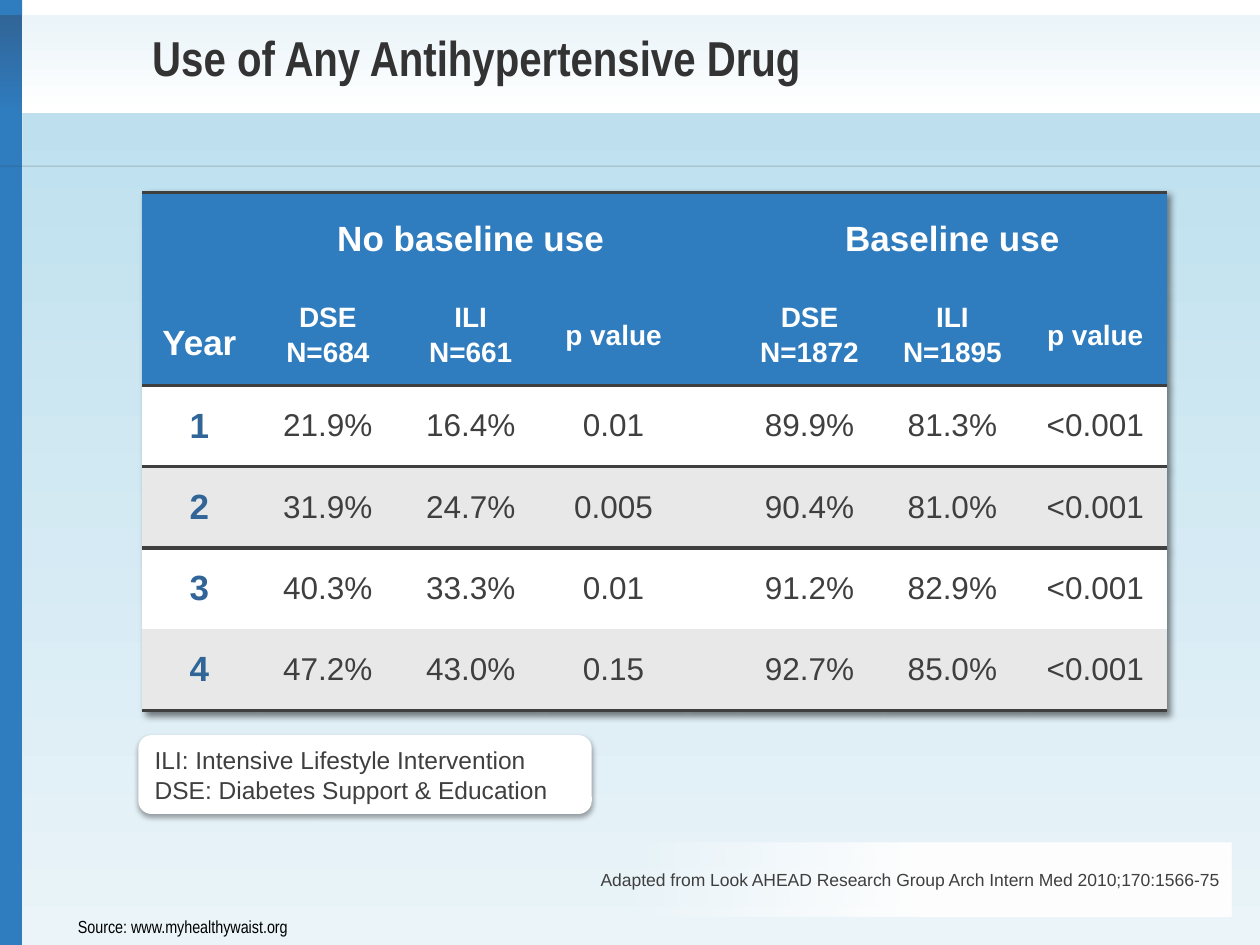
import dataclasses

import pptx
import pptx.dml.color
import pptx.enum.shapes
import pptx.enum.text
import pptx.oxml
import pptx.oxml.ns
import pptx.util
from pptx.util import Cm, Pt

SHAPE = pptx.enum.shapes.MSO_SHAPE
ALIGN = pptx.enum.text.PP_ALIGN
ANCHOR = pptx.enum.text.MSO_ANCHOR
NS = pptx.oxml.ns.nsdecls("a")


@dataclasses.dataclass(frozen=True)
class Theme:
    blue: str = "2F7CBE"
    deep_blue: str = "316598"
    sky: str = "BEE0EE"
    pale: str = "EAF4F9"
    white: str = "FFFFFF"
    grey: str = "E8E8E8"
    ink: str = "3F3F3F"
    title_ink: str = "333333"
    black: str = "000000"
    font: str = "Arial"
    narrow: str = "Arial Narrow"
    title: int = 28
    heading: int = 20
    figure: int = 18
    subheading: int = 16
    legend: int = 14
    small: int = 10


THEME = Theme()
PLAIN_TABLE_STYLE = "{2D5ABB26-0587-4C30-8999-92F81FD0307C}"


def rgb(color):
    return pptx.dml.color.RGBColor.from_string(color)


def shadow_xml(blur, distance, angle, opacity):
    return pptx.oxml.parse_xml(
        f'<a:outerShdw {NS} blurRad="{Pt(blur)}" dist="{Pt(distance)}" dir="{angle * 60000}" '
        f'algn="tl" rotWithShape="0"><a:srgbClr val="{THEME.black}">'
        f'<a:alpha val="{opacity * 1000}"/></a:srgbClr></a:outerShdw>')


def set_alpha(color_element, percent):
    color_element.append(pptx.oxml.parse_xml(f'<a:alpha {NS} val="{percent * 1000}"/>'))


def write(frame, text, size, color, font=THEME.font, bold=False, align=ALIGN.LEFT, gap=0):
    frame.text = text
    for paragraph in frame.paragraphs:
        paragraph.alignment = align
        paragraph.space_after = Pt(gap)
        for run in paragraph.runs:
            run.font.size, run.font.bold, run.font.name = Pt(size), bold, font
            run.font.color.rgb = rgb(color)


def add_panel(slide, box, *colors, kind=SHAPE.RECTANGLE, angle=270):
    """A borderless shape: one colour fills it plainly, two make a gradient."""
    panel = slide.shapes.add_shape(kind, *box)
    panel.shadow.inherit = False
    panel.line.fill.background()
    if len(colors) == 1:
        panel.fill.solid()
        panel.fill.fore_color.rgb = rgb(colors[0])
    else:
        panel.fill.gradient()
        panel.fill.gradient_angle = angle
        for stop, color in zip(panel.fill.gradient_stops, colors):
            stop.color.rgb = rgb(color)
    return panel


def add_label(slide, box, text, size, color, wrap=True, **style):
    label = slide.shapes.add_textbox(*box)
    label.text_frame.word_wrap = wrap
    label.text_frame.vertical_anchor = ANCHOR.MIDDLE
    write(label.text_frame, text, size, color, **style)


def add_backdrop(slide, left, top, width, height):
    rail, band_top, band_height = Cm(0.45), top + Cm(0.31), Cm(1.97)
    body_top = band_top + band_height
    add_panel(slide, (left, top, rail, height), THEME.blue)
    add_panel(slide, (left, band_top, width, band_height), THEME.pale, THEME.white)
    add_panel(slide, (left, band_top, rail, band_height), THEME.deep_blue, THEME.blue)
    add_panel(slide, (left + rail, body_top, width - rail, top + height - body_top),
              THEME.sky, THEME.pale)
    # Hairline across the slide
    rule_y = top + Cm(3.35)
    rule = slide.shapes.add_connector(pptx.enum.shapes.MSO_CONNECTOR.STRAIGHT,
                                      left, rule_y, left + width, rule_y)
    rule.line.width = Pt(0.5)
    rule.line.color.rgb = rgb(THEME.ink)
    set_alpha(rule.element.find(".//" + pptx.oxml.ns.qn("a:srgbClr")), 25)
    rule.element.spPr.append(pptx.oxml.parse_xml(f"<a:effectLst {NS}/>"))


def add_citation(slide, left, top, width, height):
    glow_offset = Cm(6.7)
    glow = add_panel(slide, (left + glow_offset, top, width - glow_offset, height),
                     THEME.white, THEME.white, angle=0)
    glow.fill.gradient_stops[1].position = 0.5
    set_alpha(glow.element.find(".//" + pptx.oxml.ns.qn("a:srgbClr")), 0)
    add_label(slide, (left, top, width, height),
              "Adapted from Look AHEAD Research Group Arch Intern Med 2010;170:1566-75",
              THEME.small, THEME.ink, align=ALIGN.RIGHT)


def set_borders(cell, top=None, bottom=None):
    properties = cell._tc.get_or_add_tcPr()
    for side, width in (("lnB", bottom), ("lnT", top)):
        if width:
            properties.insert(0, pptx.oxml.parse_xml(
                f'<a:{side} {NS} w="{Pt(width)}"><a:solidFill><a:srgbClr val="{THEME.ink}"/>'
                f"</a:solidFill></a:{side}>"))


def add_drug_table(slide, left, top, width, height):
    rows = [
        ["Year", "No baseline use", "", "", "", "Baseline use", "", ""],
        ["", "DSE\nN=684", "ILI\nN=661", "p value", "",
         "DSE\nN=1872", "ILI\nN=1895", "p value"],
        ["1", "21.9%", "16.4%", "0.01", "", "89.9%", "81.3%", "<0.001"],
        ["2", "31.9%", "24.7%", "0.005", "", "90.4%", "81.0%", "<0.001"],
        ["3", "40.3%", "33.3%", "0.01", "", "91.2%", "82.9%", "<0.001"],
        ["4", "47.2%", "43.0%", "0.15", "", "92.7%", "85.0%", "<0.001"],
    ]
    borders = {0: (2, None), 1: (None, 2.25), 2: (2.25, 2.25), 3: (2.25, None), 5: (None, 2)}
    table = slide.shapes.add_table(len(rows), len(rows[0]), left, top, width, height).table
    table.first_row = table.horz_banding = False
    properties = table._tbl.tblPr
    properties[0].text = PLAIN_TABLE_STYLE
    effects = pptx.oxml.parse_xml(f"<a:effectLst {NS}/>")
    effects.append(shadow_xml(4, 3, 45, 50))
    properties.insert(0, effects)

    # The year and spacer columns are fixed; the six others share what is left
    year_width, spacer_width = Cm(2.3), Cm(1.07)
    value_width = (width - year_width - spacer_width) // 6
    for index, column in enumerate(table.columns):
        column.width = {0: year_width, 4: spacer_width}.get(index, value_width)
    head_heights = [Cm(1.88), Cm(2.01)]
    year_height = (height - sum(head_heights)) // 4
    for row, row_height in zip(table.rows, head_heights + [year_height] * 4):
        row.height = row_height

    for r, texts in enumerate(rows):
        for c, text in enumerate(texts):
            cell = table.cell(r, c)
            cell.vertical_anchor = ANCHOR.MIDDLE
            cell.fill.solid()
            cell.fill.fore_color.rgb = rgb(
                THEME.blue if r < 2 else THEME.grey if r % 2 else THEME.white)
            set_borders(cell, *borders.get(r, (None, None)))
            if not text:
                continue
            if r < 2:
                size, color = (THEME.subheading if r else THEME.heading), THEME.white
            else:
                size, color = ((THEME.figure, THEME.ink) if c
                               else (THEME.heading, THEME.deep_blue))
            write(cell.text_frame, text, size, color, bold=r < 2 or c == 0,
                  align=ALIGN.CENTER, gap=2.4 if r == 1 else 0)

    # Spanning headings
    year = table.cell(0, 0)
    year.merge(table.cell(1, 0))
    year.vertical_anchor = ANCHOR.BOTTOM
    year.margin_bottom = Cm(0.45)
    set_borders(year, bottom=2.25)
    for first in (1, 5):
        table.cell(0, first).merge(table.cell(0, first + 2))


def add_legend(slide, left, top, width, height):
    legend = add_panel(slide, (left, top, width, height), THEME.white,
                       kind=SHAPE.ROUNDED_RECTANGLE)
    legend.element.spPr.find(pptx.oxml.ns.qn("a:effectLst")).append(
        shadow_xml(3.1, 1.8, 90, 35))
    legend.text_frame.word_wrap = True
    legend.text_frame.vertical_anchor = ANCHOR.MIDDLE
    write(legend.text_frame,
          "ILI: Intensive Lifestyle Intervention\nDSE: Diabetes Support & Education",
          THEME.legend, THEME.ink)


def main():
    deck = pptx.Presentation()
    deck.slide_width, deck.slide_height = Cm(25.4), Cm(19.05)
    slide = deck.slides.add_slide(deck.slide_layouts[6])

    add_backdrop(slide, 0, 0, deck.slide_width, deck.slide_height)
    add_label(slide, (Cm(1.32), Cm(18.34), Cm(4.8), Cm(0.69)), "Source: www.myhealthywaist.org",
              THEME.small, THEME.black, wrap=False, font=THEME.narrow)
    add_label(slide, (Cm(2.82), Cm(0.43), Cm(21.36), Cm(1.45)),
              "Use of Any Antihypertensive Drug",
              THEME.title, THEME.title_ink, font=THEME.narrow, bold=True)
    add_citation(slide, Cm(5.9), Cm(16.98), Cm(18.92), Cm(1.5))
    add_drug_table(slide, Cm(2.87), Cm(3.88), Cm(20.65), Cm(10.44))
    add_legend(slide, Cm(2.79), Cm(14.82), Cm(9.14), Cm(1.59))
    deck.save("out.pptx")


if __name__ == "__main__":
    main()
